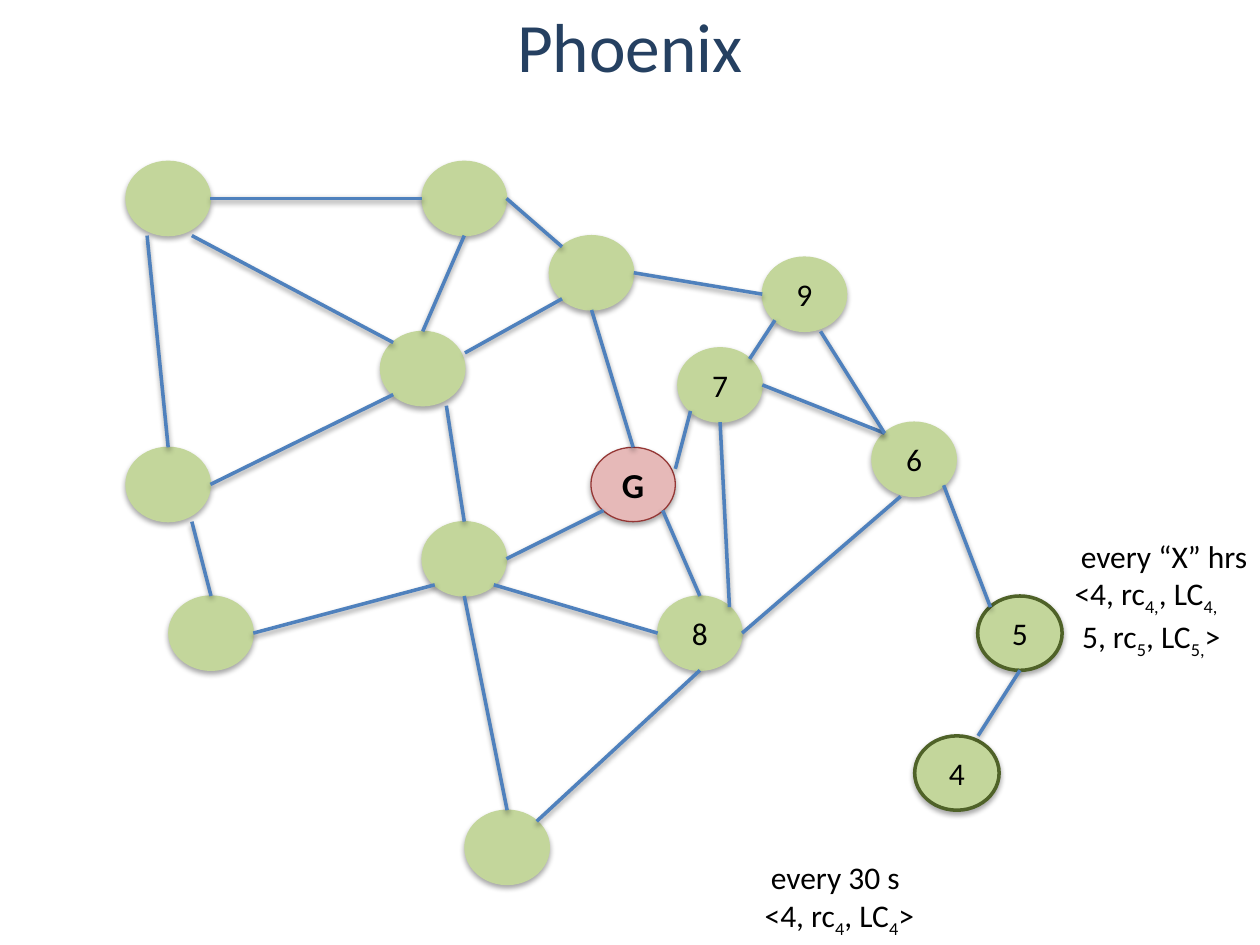
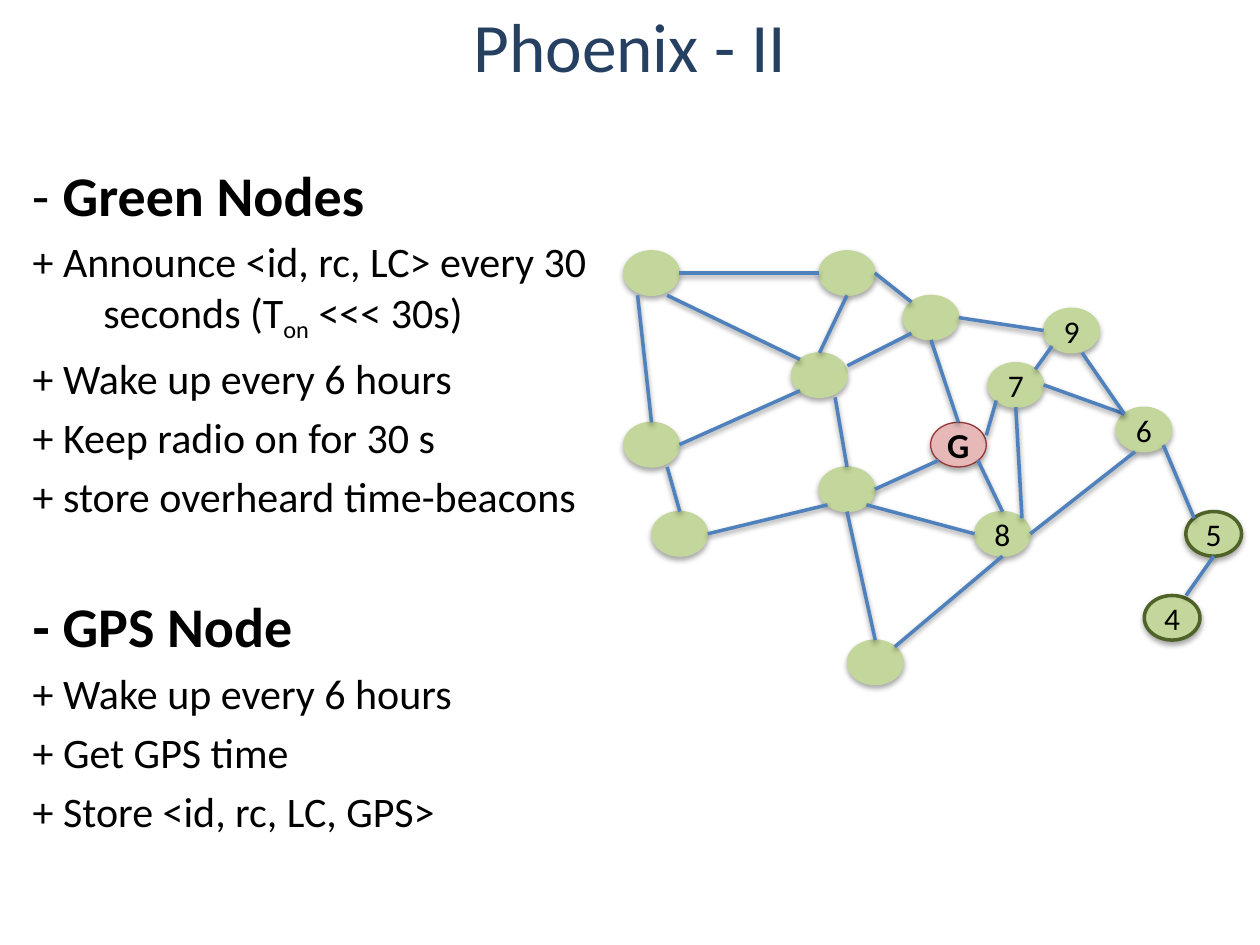
"""Build two slides on the Phoenix time-beacon network and save them to out.pptx."""
from lxml.etree import SubElement
from pptx import Presentation
from pptx.dml.color import RGBColor
from pptx.enum.shapes import MSO_CONNECTOR, MSO_SHAPE
from pptx.enum.text import MSO_ANCHOR as ANCHOR, MSO_AUTO_SIZE as FIT, PP_ALIGN as ALIGN
from pptx.oxml.ns import qn
from pptx.util import Pt

PX = 9144
FONT = "Calibri"
COLORS = {name: RGBColor.from_string(value) for name, value in {
    "title": "254061", "text": "000000", "link": "4F81BD",
    "green": "C3D69B", "dark_green": "4F6228",
    "pink": "E6B9B8", "dark_red": "953735",
}.items()}

NODE_W, NODE_H = 67, 59
NODES = {
    "top left": (100, 128), "7": (538, 276), "left": (100, 355),
    "9": (605, 204), "hub": (335, 414), "top": (335, 128),
    "middle": (302, 263), "4": (726, 584), "6": (692, 335),
    "low left": (134, 473), "bottom": (369, 643), "8": (522, 473),
    "5": (776, 473), "upper right": (436, 187), "G": (469, 355),
}
ANCHORS = {
    "n": (0.5, 0), "e": (1, 0.5), "s": (0.5, 1), "w": (0, 0.5),
    "ne": (0.85, 0.15), "se": (0.85, 0.85),
    "sw": (0.15, 0.85), "nw": (0.15, 0.15),
    "n75": (0.75, 0), "e29": (1, 0.29),
    "s25": (0.25, 1), "s34": (0.34, 1), "s69": (0.69, 1), "s78": (0.78, 1),
}
LINKS = [
    ("top left", "e", "top", "w"), ("top left", "s78", "middle", "nw"),
    ("top left", "s25", "left", "n"), ("left", "e", "middle", "sw"),
    ("middle", "n", "top", "s"), ("left", "s78", "low left", "n"),
    ("hub", "sw", "low left", "e"), ("7", "s", "8", "ne"),
    ("G", "se", "8", "n"), ("8", "s", "bottom", "ne"),
    ("upper right", "s", "G", "n"), ("hub", "se", "8", "w"),
    ("hub", "s", "bottom", "n"), ("middle", "s78", "hub", "n"),
    ("upper right", "e", "9", "w"), ("hub", "e", "G", "sw"),
    ("middle", "e29", "upper right", "sw"), ("7", "e", "6", "nw"),
    ("8", "e", "6", "s34"), ("9", "s69", "6", "nw"),
    ("7", "ne", "9", "sw"), ("G", "e29", "7", "sw"),
    ("4", "n75", "5", "s"), ("6", "se", "5", "nw"),
    ("upper right", "nw", "top", "e"),
]


def write(paragraph, runs, size, left=0, hanging=0, color="text"):
    """Fill a paragraph with (text, style) runs; style is "", "bold" or "sub"."""
    properties = paragraph._p.get_or_add_pPr()
    properties.set("marL", str(left * PX))
    properties.set("indent", str(-hanging * PX))
    SubElement(properties, qn("a:buNone"))
    for text, style in runs:
        run = paragraph.add_run()
        run.text = text
        run.font.name = FONT
        run.font.size = Pt(size)
        run.font.bold = style == "bold"
        run.font.color.rgb = COLORS[color]
        if style == "sub":
            run.font._element.set("baseline", "-25000")


def add_shadow(shape, distance, opacity):
    """Give a shape a soft shadow straight below it."""
    effects = SubElement(shape._element.spPr, qn("a:effectLst"))
    shadow = SubElement(effects, qn("a:outerShdw"), blurRad="40000",
                        dist=str(distance), dir="5400000", rotWithShape="0")
    black = SubElement(shadow, qn("a:srgbClr"), val="000000")
    SubElement(black, qn("a:alpha"), val=str(opacity * 1000))


prs = Presentation()
prs.slide_width, prs.slide_height = 1000 * PX, 750 * PX
network = prs.slides.add_slide(prs.slide_layouts[5])
roles = prs.slides.add_slide(prs.slide_layouts[1])

for slide, heading in ((network, "Phoenix"), (roles, "Phoenix - II")):
    title = slide.shapes.title
    title.left, title.top, title.width, title.height = 50 * PX, PX, 900 * PX, 69 * PX
    title.text_frame.auto_size = FIT.NONE
    title.text_frame.vertical_anchor = ANCHOR.MIDDLE
    title.text_frame.paragraphs[0].alignment = ALIGN.CENTER
    write(title.text_frame.paragraphs[0], [(heading, "")], 39.6, color="title")

small_graph = roles.shapes.add_group_shape().shapes
for shapes, left, top, scale_x, scale_y in (
        (network.shapes, 100, 128, 1, 1), (small_graph, 495, 199, 0.66, 0.6)):
    corners = {name: (left + (x - 100) * scale_x, top + (y - 128) * scale_y)
               for name, (x, y) in NODES.items()}
    width, height = NODE_W * scale_x, NODE_H * scale_y

    for name, (x, y) in corners.items():
        node = shapes.add_shape(MSO_SHAPE.OVAL, round(x * PX), round(y * PX),
                                round(width * PX), round(height * PX))
        is_gateway, is_sender = name == "G", name in ("4", "5")
        node.fill.solid()
        node.fill.fore_color.rgb = COLORS["pink" if is_gateway else "green"]
        node.line.color.rgb = COLORS["dark_red" if is_gateway else
                                     "dark_green" if is_sender else "green"]
        node.line.width = Pt(2 if is_sender else 0.75)
        add_shadow(node, 23000, 35)
        if len(name) == 1:
            frame = node.text_frame
            frame.margin_left = frame.margin_right = 0
            frame.margin_top = frame.margin_bottom = 0
            frame.vertical_anchor = ANCHOR.MIDDLE
            frame.paragraphs[0].alignment = ALIGN.CENTER
            write(frame.paragraphs[0], [(name, "bold" if is_gateway else "")],
                  20 if is_gateway else 18)

    for start, start_anchor, end, end_anchor in LINKS:
        ends = []
        for name, anchor in ((start, start_anchor), (end, end_anchor)):
            (x, y), (across, down) = corners[name], ANCHORS[anchor]
            ends += [round((x + across * width) * PX), round((y + down * height) * PX)]
        link = shapes.add_connector(MSO_CONNECTOR.STRAIGHT, *ends)
        link.line.color.rgb = COLORS["link"]
        link.line.width = Pt(2)
        add_shadow(link, 20000, 38)

BEACONS = [
    ((597, 676, 143, 71), [
        (5, [("every 30 s", "")]),
        (0, [("<4, rc", ""), ("4", "sub"), (", LC", ""), ("4", "sub"), (">", "")]),
    ]),
    ((843, 421, 160, 101), [
        (5, [("every “X” hrs", "")]),
        (0, [("<4, rc", ""), ("4,", "sub"), (", LC", ""), ("4,", "sub")]),
        (6, [("5, rc", ""), ("5", "sub"), (", LC", ""), ("5,", "sub"), (">", "")]),
    ]),
]
for box, lines in BEACONS:
    beacon = network.shapes.add_textbox(*(side * PX for side in box)).text_frame
    beacon.word_wrap = False
    beacon.auto_size = FIT.SHAPE_TO_FIT_TEXT
    for i, (indent, runs) in enumerate(lines):
        line = beacon.add_paragraph() if i else beacon.paragraphs[0]
        write(line, runs, 18, left=indent)

DUTIES = [
    (32, 6, [("- ", ""), ("Green Nodes", "bold")]),
    (24, 5, [("+ Announce <id, rc, LC> every 30 seconds (T", ""),
             ("on", "sub"), (" <<< 30s)", "")]),
    (24, 5, [("+ Wake up every 6 hours", "")]),
    (24, 5, [("+ Keep radio on for 30 s", "")]),
    (24, 5, [("+ store overheard time-beacons", "")]),
    (32, 40, [("- GPS Node", "bold")]),
    (24, 5, [("+ Wake up every 6 hours", "")]),
    (24, 5, [("+ Get GPS time", "")]),
    (24, 5, [("+ Store <id, rc, LC, GPS>", "")]),
]
duties = roles.placeholders[1]
duties.left, duties.top, duties.width, duties.height = 16 * PX, 122 * PX, 479 * PX, 548 * PX
duties.text_frame.auto_size = FIT.NONE
for i, (size, gap, runs) in enumerate(DUTIES):
    duty = duties.text_frame.add_paragraph() if i else duties.text_frame.paragraphs[0]
    duty.space_before = Pt(gap)
    write(duty, runs, size, left=56, hanging=56)

prs.save("out.pptx")
